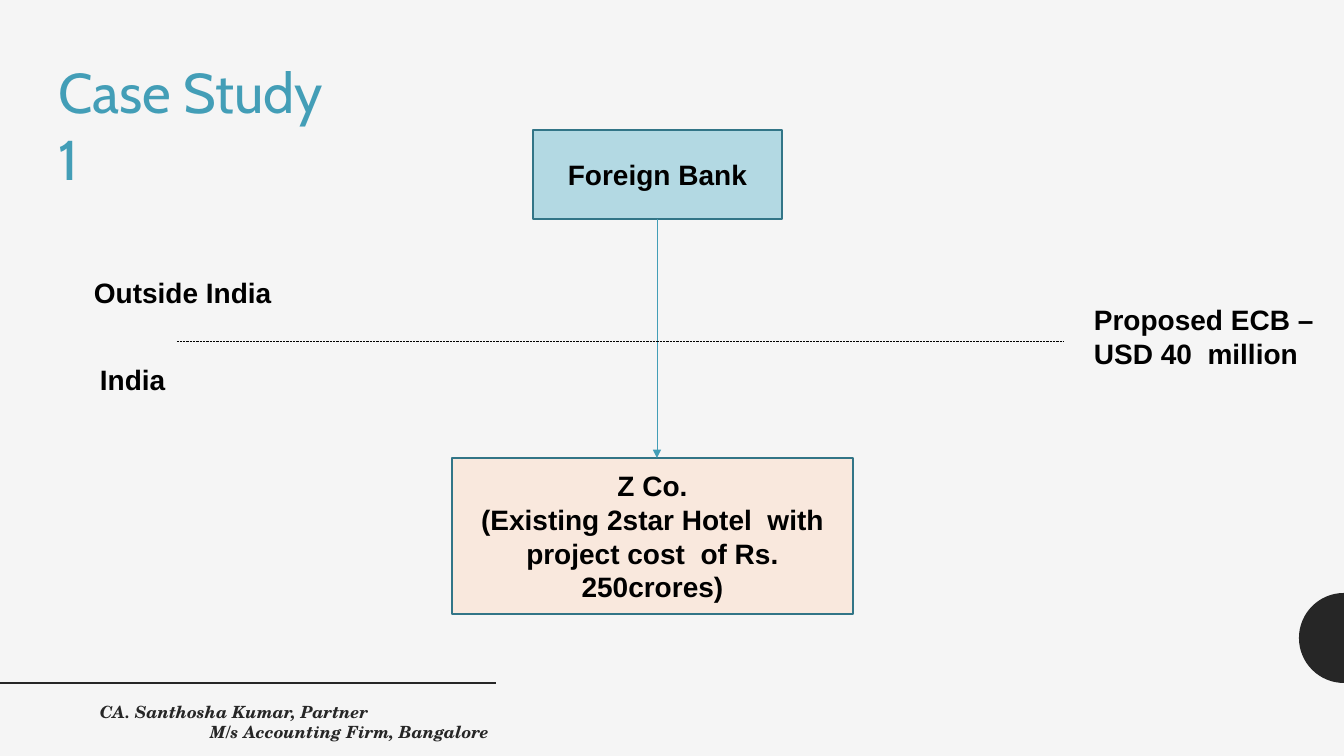
from math import cos, pi, sin

from lxml.etree import SubElement
from pptx import Presentation
from pptx.dml.color import RGBColor
from pptx.enum.dml import MSO_LINE
from pptx.enum.shapes import MSO_CONNECTOR, MSO_SHAPE
from pptx.enum.text import MSO_ANCHOR, MSO_AUTO_SIZE, PP_ALIGN
from pptx.oxml.ns import qn
from pptx.util import Pt

INK = "262626"
TEAL = "439EB7"


def px(n):
    return round(n * 914400 / 100.8)


def rgb(value):
    return RGBColor.from_string(value)


def write(p, text, font="Arial", size=20, color="000000", bold=True,
          italic=False, align=PP_ALIGN.LEFT):
    p.alignment = align
    r = p.add_run()
    r.text = text
    f = r.font
    f.name, f.size, f.bold, f.italic = font, Pt(size), bold, italic
    f.color.rgb = rgb(color)


class Deck:
    """Hold the style and the current slide, and draw each kind of element."""

    def __init__(self, prs):
        self.s = prs.slides.add_slide(prs.slide_layouts[5])
        fill = self.s.background.fill
        fill.solid()
        fill.fore_color.rgb = rgb("F5F5F5")

    def title(self, text, x, y, w, h):
        sp = self.s.shapes.title
        sp.left, sp.top, sp.width, sp.height = map(px, (x, y, w, h))
        tf = sp.text_frame
        tf.word_wrap = True
        tf.auto_size = MSO_AUTO_SIZE.NONE
        tf.vertical_anchor = MSO_ANCHOR.TOP
        write(tf.paragraphs[0], text, "Cabin", 40, TEAL, False)

    def box(self, lines, x, y, w, h, fill):
        sp = self.s.shapes.add_shape(MSO_SHAPE.RECTANGLE, *map(px, (x, y, w, h)))
        sp.shadow.inherit = False
        sp.fill.solid()
        sp.fill.fore_color.rgb = rgb(fill)
        sp.line.color.rgb = rgb("327587")
        sp.line.width = Pt(1)
        tf = sp.text_frame
        tf.word_wrap = True
        tf.vertical_anchor = MSO_ANCHOR.MIDDLE
        for i, line in enumerate(lines):
            p = tf.add_paragraph() if i else tf.paragraphs[0]
            write(p, line, align=PP_ALIGN.CENTER)

    def label(self, lines, x, y, w, h, **style):
        tf = self.s.shapes.add_textbox(*map(px, (x, y, w, h))).text_frame
        tf.word_wrap = True
        for i, (line, align) in enumerate(lines):
            p = tf.add_paragraph() if i else tf.paragraphs[0]
            write(p, line, align=align, **style)

    def line(self, x1, y1, x2, y2, color, width, dash=None, arrow=False):
        cx = self.s.shapes.add_connector(MSO_CONNECTOR.STRAIGHT, *map(px, (x1, y1, x2, y2)))
        cx.line.color.rgb = rgb(color)
        cx.line.width = Pt(width)
        if dash:
            cx.line.dash_style = dash
        if arrow:
            SubElement(cx.line._get_or_add_ln(), qn("a:tailEnd"), type="triangle")
        SubElement(cx._element.spPr, qn("a:effectLst"))

    def half_disc(self, x, y, radius, color, steps=32):
        points = [(px(x - radius * sin(pi * i / steps)), px(y - radius * cos(pi * i / steps)))
                  for i in range(steps + 1)]
        fb = self.s.shapes.build_freeform(*points[0])
        fb.add_line_segments(points[1:])
        sp = fb.convert_to_shape()
        sp.shadow.inherit = False
        sp.fill.solid()
        sp.fill.fore_color.rgb = rgb(color)
        sp.line.fill.background()


def main():
    prs = Presentation()
    prs.slide_width, prs.slide_height = px(1344), px(756)
    deck = Deck(prs)
    deck.half_disc(1344, 638, 45, INK)
    deck.line(0, 683, 496, 683, INK, 2)
    deck.title("Case Study 1", 48, 52, 317, 78)
    deck.box(["Foreign Bank"], 533, 130, 249, 89, "B3D9E3")
    deck.box(["Z Co.", "(Existing 2star Hotel  with project cost  of Rs. 250crores)"],
             452, 458, 401, 156, "F9E8DD")
    deck.line(657, 219, 657, 458, TEAL, 0.5, arrow=True)
    left = PP_ALIGN.LEFT
    deck.label([("Outside India", left)], 84, 271, 200, 44)
    deck.label([("Proposed ECB – USD 40  million", left)], 1084, 298, 260, 78)
    deck.label([("India", left)], 90, 358, 87, 44)
    deck.line(177, 341, 1064, 341, "000000", 0.5, dash=MSO_LINE.ROUND_DOT)
    deck.label([("CA. Santhosha Kumar, Partner", left),
                ("M/s Accounting Firm, Bangalore", PP_ALIGN.RIGHT)],
               90, 697, 409, 40, font="TeX Gyre Schola", size=12, color=INK, italic=True)
    prs.save("out.pptx")


if __name__ == "__main__":
    main()
